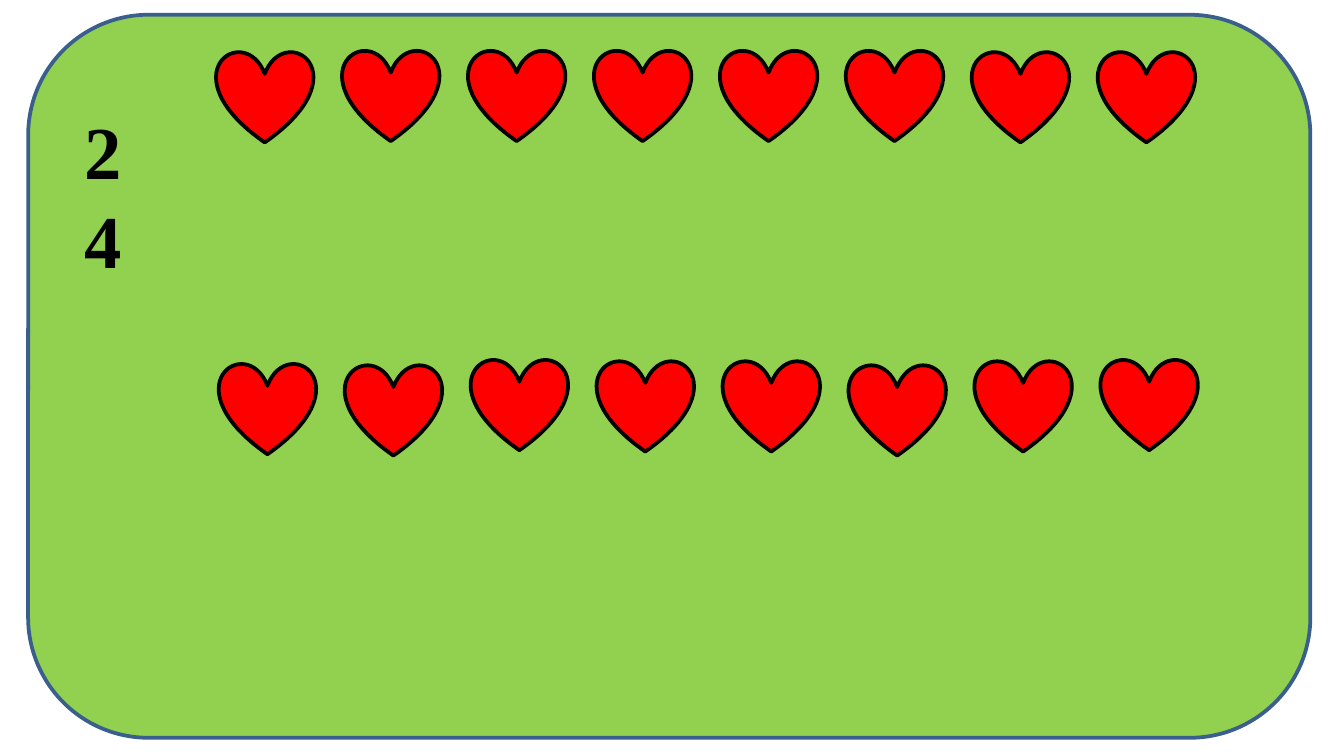
from pptx import Presentation
from pptx.dml.color import RGBColor
from pptx.enum.shapes import MSO_SHAPE
from pptx.enum.text import MSO_AUTO_SIZE
from pptx.util import Inches, Pt

COLORS = {"panel": "92D050", "panel_edge": "3A5F8C", "heart": "FF0000", "ink": "000000"}
HEART_WIDTH, HEART_HEIGHT = 0.72, 0.68


def add_outlined(slide, preset, left, top, width, height, fill, edge):
    """Add a flat preset shape with a 2 pt outline."""
    outlined = slide.shapes.add_shape(
        preset, Inches(left), Inches(top), Inches(width), Inches(height))
    outlined.shadow.inherit = False
    outlined.fill.solid()
    outlined.fill.fore_color.rgb = RGBColor.from_string(COLORS[fill])
    outlined.line.color.rgb = RGBColor.from_string(COLORS[edge])
    outlined.line.width = Pt(2)


def add_panel(slide, left, top, width, height):
    add_outlined(slide, MSO_SHAPE.ROUNDED_RECTANGLE, left, top, width, height,
                 "panel", "panel_edge")


def add_heart_row(slide, left, top, width, drops):
    """Spread hearts evenly over the width, each lowered by its drop."""
    step = (width - HEART_WIDTH) / (len(drops) - 1)
    for column, drop in enumerate(drops):
        add_outlined(slide, MSO_SHAPE.HEART, left + column * step, top + drop,
                     HEART_WIDTH, HEART_HEIGHT, "heart", "ink")


def add_numbers(slide, left, top, width, height, numbers):
    column = slide.shapes.add_textbox(
        Inches(left), Inches(top), Inches(width), Inches(height)).text_frame
    column.word_wrap = True
    column.auto_size = MSO_AUTO_SIZE.SHAPE_TO_FIT_TEXT
    column.text = "\n".join(numbers)
    for number in column.paragraphs:
        number.font.name = "Times New Roman"
        number.font.size = Pt(40)
        number.font.bold = True
        number.font.color.rgb = RGBColor.from_string(COLORS["ink"])


def main():
    prs = Presentation()
    prs.slide_width = Inches(10)
    prs.slide_height = prs.slide_width * 9 // 16
    slide = prs.slides.add_slide(prs.slide_layouts[6])

    # Green background panel
    add_panel(slide, 0.21, 0.11, 9.54, 5.38)

    # Two rows of eight hearts
    add_heart_row(slide, 1.61, 0.37, 7.28, [0.01, 0, 0, 0, 0, 0, 0.01, 0.01])
    add_heart_row(slide, 1.63, 2.67, 7.28, [0.03, 0.04, 0, 0.01, 0.01, 0.04, 0.01, 0])

    # Numbers at the left
    add_numbers(slide, 0.53, 0.73, 0.57, 1.45, ["2", "4"])

    prs.save("out.pptx")


if __name__ == "__main__":
    main()
